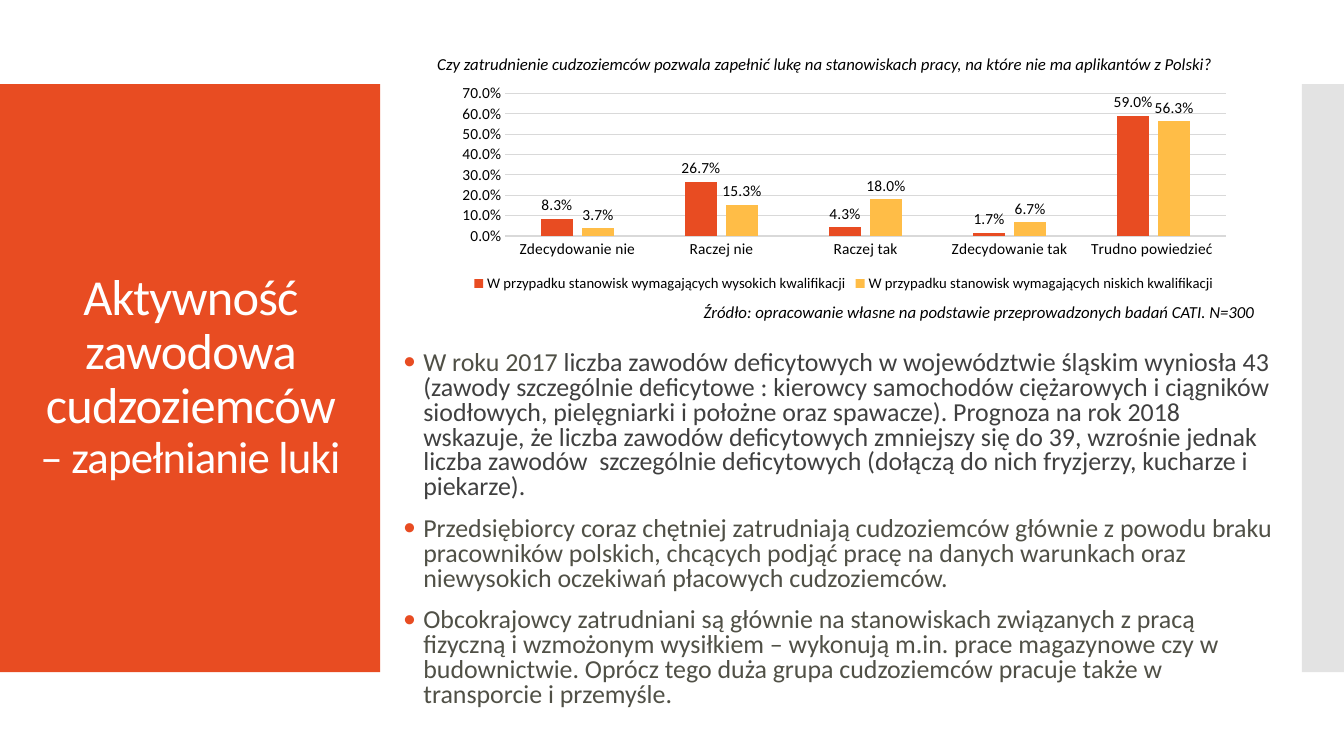
from lxml.etree import SubElement
from pptx import Presentation
from pptx.chart.data import CategoryChartData
from pptx.dml.color import RGBColor
from pptx.enum.chart import XL_CHART_TYPE, XL_LABEL_POSITION, XL_LEGEND_POSITION, XL_TICK_MARK
from pptx.enum.shapes import MSO_SHAPE
from pptx.enum.text import MSO_ANCHOR, MSO_AUTO_SIZE, PP_ALIGN
from pptx.oxml.ns import qn
from pptx.util import Cm, Pt

ORANGE = RGBColor(0xE8, 0x4C, 0x22)
YELLOW = RGBColor(0xFF, 0xBD, 0x47)
SIDE_GREY = RGBColor(0xC8, 0xC8, 0xC8)
GRID_GREY = RGBColor(0xD9, 0xD9, 0xD9)
OLIVE = RGBColor(0x50, 0x50, 0x46)
DARK_GREY = RGBColor(0x40, 0x40, 0x40)
BLACK = RGBColor(0, 0, 0)
WHITE = RGBColor(0xFF, 0xFF, 0xFF)

FONT = "Calibri"
PERCENT = "0.0%"
BULLET_INDENT = Cm(0.51)
BAND_TOP, BAND_HEIGHT = Cm(2.12), Cm(14.82)

TITLE_RUNS = [
    ("Aktywność zawodowa cudzoziemców ", 36),
    ("– zapełnianie luki", 32),
]
QUESTION = ("Czy zatrudnienie cudzoziemców pozwala zapełnić lukę na stanowiskach pracy, "
            "na które nie ma aplikantów z Polski?")
SOURCE = "Źródło: opracowanie własne na podstawie przeprowadzonych badań CATI. N=300"
ANSWERS = ["Zdecydowanie nie", "Raczej nie", "Raczej tak", "Zdecydowanie tak",
           "Trudno powiedzieć "]
QUALIFICATIONS = [
    ("W przypadku stanowisk wymagających wysokich kwalifikacji",
     (0.083, 0.267, 0.043, 0.017, 0.59), ORANGE),
    ("W przypadku stanowisk wymagających niskich kwalifikacji",
     (0.037, 0.153, 0.18, 0.067, 0.563), YELLOW),
]
FINDINGS = [
    [("W roku 2017 ", OLIVE),
     ("liczba zawodów deficytowych w województwie śląskim wyniosła 43 (zawody szczególnie "
      "deficytowe : kierowcy samochodów ciężarowych i ciągników siodłowych, pielęgniarki "
      "i położne oraz spawacze). Prognoza na rok 2018 wskazuje, że liczba zawodów "
      "deficytowych zmniejszy się do 39, wzrośnie jednak liczba zawodów  szczególnie "
      "deficytowych (dołączą do nich fryzjerzy, kucharze i piekarze).", DARK_GREY)],
    [("Przedsiębiorcy coraz chętniej zatrudniają cudzoziemców głównie z powodu braku "
      "pracowników polskich, chcących podjąć pracę na danych warunkach oraz niewysokich "
      "oczekiwań płacowych cudzoziemców.", OLIVE)],
    [("Obcokrajowcy zatrudniani są głównie na stanowiskach związanych z pracą fizyczną "
      "i wzmożonym wysiłkiem – wykonują m.in. prace magazynowe czy w budownictwie. Oprócz "
      "tego duża grupa cudzoziemców pracuje także w transporcie i przemyśle.", OLIVE)],
]


def set_all(target, **values):
    for attribute, value in values.items():
        setattr(target, attribute, value)


def format_font(font, size, color, **values):
    set_all(font, name=FONT, size=Pt(size), **values)
    font.color.rgb = color


def add_run(paragraph, text, size, color, **values):
    run = paragraph.add_run()
    run.text = text
    format_font(run.font, size, color, **values)
    return run


def add_band(slide, left, width, color, opacity=100):
    band = slide.shapes.add_shape(MSO_SHAPE.RECTANGLE, left, BAND_TOP, width, BAND_HEIGHT)
    band.shadow.inherit = False
    band.fill.solid()
    band.fill.fore_color.rgb = color
    band.line.fill.background()
    if opacity < 100:
        srgb = band.element.spPr.find(".//" + qn("a:srgbClr"))
        SubElement(srgb, qn("a:alpha"), val=str(opacity * 1000))


def format_title(slide):
    title = slide.shapes.title
    set_all(title, left=Cm(0.71), top=Cm(3.12), width=Cm(8.18), height=Cm(12.78))
    set_all(title.text_frame, word_wrap=True, auto_size=MSO_AUTO_SIZE.NONE,
            vertical_anchor=MSO_ANCHOR.MIDDLE)
    paragraph = title.text_frame.paragraphs[0]
    set_all(paragraph, alignment=PP_ALIGN.CENTER, line_spacing=0.9)
    for text, size in TITLE_RUNS:
        run = add_run(paragraph, text, size, WHITE)
        run.font._element.set("spc", "-60")
    # The title stands in front of the orange band.
    slide.shapes.element.append(title.element)


def add_caption(slide, text, left, top, width, wrap):
    frame = slide.shapes.add_textbox(left, top, width, Cm(0.76)).text_frame
    set_all(frame, word_wrap=wrap, auto_size=MSO_AUTO_SIZE.SHAPE_TO_FIT_TEXT)
    add_run(frame.paragraphs[0], text, 12, BLACK, italic=True)


def add_bullet(paragraph):
    properties = paragraph._p.get_or_add_pPr()
    properties.set("marL", str(BULLET_INDENT))
    properties.set("indent", str(-BULLET_INDENT))
    color = SubElement(properties, qn("a:buClr"))
    SubElement(color, qn("a:srgbClr"), val=str(ORANGE))
    SubElement(properties, qn("a:buFont"), typeface=FONT)
    SubElement(properties, qn("a:buChar"), char="•")


def add_findings(slide):
    frame = slide.shapes.add_textbox(Cm(9.91), Cm(8.59), Cm(22.61), Cm(9.53)).text_frame
    set_all(frame, word_wrap=True, vertical_anchor=MSO_ANCHOR.MIDDLE)
    for number, finding in enumerate(FINDINGS):
        paragraph = frame.add_paragraph() if number else frame.paragraphs[0]
        set_all(paragraph, line_spacing=0.8, space_before=Pt(12))
        add_bullet(paragraph)
        for text, color in finding:
            add_run(paragraph, text, 18.5, color)


def format_axes(chart):
    for axis in (chart.category_axis, chart.value_axis):
        set_all(axis, major_tick_mark=XL_TICK_MARK.NONE, minor_tick_mark=XL_TICK_MARK.NONE)
    values = chart.value_axis
    set_all(values, minimum_scale=0, maximum_scale=0.7, major_unit=0.1,
            has_major_gridlines=True)
    set_all(values.tick_labels, number_format=PERCENT, number_format_is_linked=False)
    values.format.line.fill.background()
    for line in (chart.category_axis.format.line, values.major_gridlines.format.line):
        line.color.rgb = GRID_GREY
        line.width = Pt(0.75)


def add_answer_chart(slide):
    data = CategoryChartData(number_format=PERCENT)
    data.categories = ANSWERS
    for name, shares, _ in QUALIFICATIONS:
        data.add_series(name, shares)
    chart = slide.shapes.add_chart(XL_CHART_TYPE.COLUMN_CLUSTERED, Cm(11.25), Cm(2.01),
                                   Cm(20.04), Cm(5.46), data).chart
    set_all(chart, has_title=False, has_legend=True)
    format_font(chart.font, 11, BLACK)
    set_all(chart.legend, position=XL_LEGEND_POSITION.BOTTOM, include_in_layout=False)
    format_font(chart.legend.font, 10.5, BLACK)
    format_axes(chart)
    plot = chart.plots[0]
    set_all(plot, gap_width=219, overlap=-27, vary_by_categories=False)
    for series, (_, _, color) in zip(plot.series, QUALIFICATIONS):
        series.format.fill.solid()
        series.format.fill.fore_color.rgb = color
        set_all(series.data_labels, show_value=True, number_format=PERCENT,
                number_format_is_linked=False, position=XL_LABEL_POSITION.OUTSIDE_END)


def main():
    presentation = Presentation()
    set_all(presentation, slide_width=Cm(33.87), slide_height=Cm(19.05))
    slide = presentation.slides.add_slide(presentation.slide_layouts[5])
    add_band(slide, 0, Cm(9.58), ORANGE)
    add_band(slide, Cm(32.81), Cm(1.06), SIDE_GREY, opacity=50)
    format_title(slide)
    add_findings(slide)
    add_caption(slide, QUESTION, Cm(10.77), Cm(1.24), Cm(20.27), wrap=True)
    add_caption(slide, SOURCE, Cm(17.48), Cm(7.47), Cm(14.4), wrap=False)
    add_answer_chart(slide)
    presentation.save("out.pptx")


if __name__ == "__main__":
    main()
